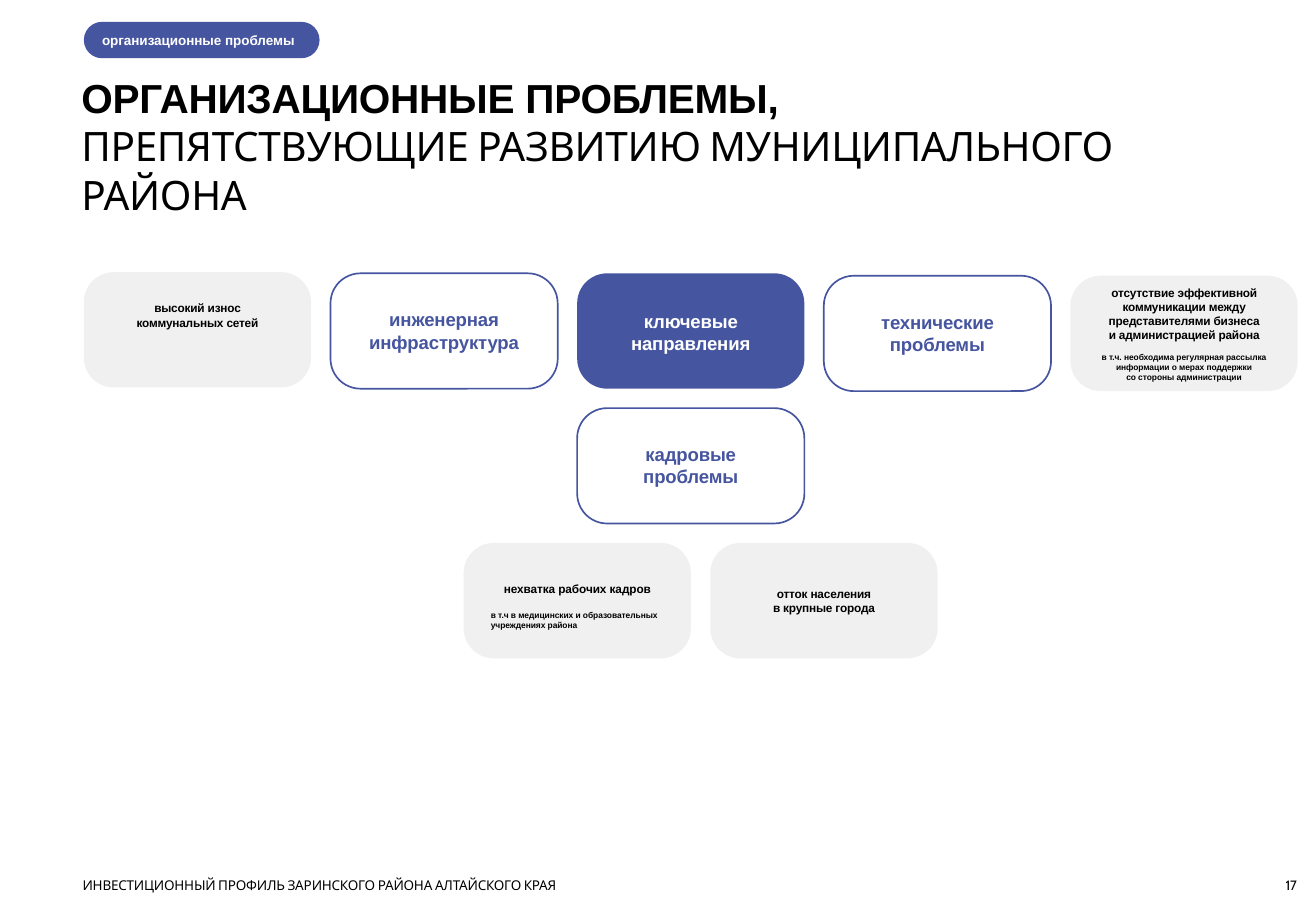
from pptx import Presentation
from pptx.dml.color import RGBColor
from pptx.enum.shapes import MSO_SHAPE as Shape
from pptx.enum.text import PP_ALIGN as Align
from pptx.util import Inches, Pt

COLORS = {"blue": "46559F", "gray": "F0F0F0", "white": "FFFFFF", "black": "000000"}
CARD_W, CARD_H = 1.87, 0.95
COL_X, COL_STEP = 0.69, 2.03

HEADING = {"size": 11, "line": 13.1, "spc": -10}
PROBLEM = {"size": 7, "spc": -8}
DETAIL = {"size": 5, "spc": -5}


def color(name):
    return RGBColor.from_string(COLORS[name])


def rounded(s, x, y, w, h, radius, fill=None, line=None):
    sp = s.shapes.add_shape(Shape.ROUNDED_RECTANGLE, Inches(x), Inches(y), Inches(w), Inches(h))
    sp.adjustments[0] = radius
    sp.shadow.inherit = False
    if fill:
        sp.fill.solid()
        sp.fill.fore_color.rgb = color(fill)
    else:
        sp.fill.background()
    if line:
        sp.line.color.rgb = color(line)
        sp.line.width = Pt(1)
    else:
        sp.line.fill.background()


def text(s, x, y, w, h, paragraphs, ink="black", align=Align.LEFT, top=0.02):
    tf = s.shapes.add_textbox(Inches(x), Inches(y), Inches(w), Inches(h)).text_frame
    tf.word_wrap = True
    frame = {"margin_left": 0, "margin_right": 0, "margin_bottom": 0, "margin_top": Inches(top)}
    for name, value in frame.items():
        setattr(tf, name, value)
    for i, (content, style) in enumerate(paragraphs):
        p = tf.add_paragraph() if i else tf.paragraphs[0]
        p.alignment = align
        if "line" in style:
            p.line_spacing = Pt(style["line"])
        if "before" in style:
            p.space_before = Pt(style["before"])
        r = p.add_run()
        r.text = content
        font = {"size": Pt(style["size"]), "name": style.get("font", "Arial"),
                "bold": style.get("bold", True)}
        for name, value in font.items():
            setattr(r.font, name, value)
        r.font.color.rgb = color(ink)
        r._r.get_or_add_rPr().set("spc", str(style["spc"]))


def card(s, col, y, text_y, text_w, paragraphs, fill=None, line=None, ink="black"):
    x = COL_X + col * COL_STEP
    rounded(s, x, y, CARD_W, CARD_H, 0.26, fill, line)
    text(s, x + (CARD_W - text_w) / 2, text_y, text_w, y + CARD_H - text_y,
         paragraphs, ink, Align.CENTER)


def main():
    prs = Presentation()
    prs.slide_width, prs.slide_height = Inches(10.83), Inches(7.5)
    s = prs.slides.add_slide(prs.slide_layouts[6])

    rounded(s, COL_X, 0.18, 1.94, 0.3, 0.5, "blue")
    text(s, 0.84, 0.24, 1.7, 0.16,
         [("организационные проблемы", {"size": 8, "spc": -5})], "white")
    text(s, 0.67, 0.58, 9.67, 1.23, [
        ("ОРГАНИЗАЦИОННЫЕ ПРОБЛЕМЫ,", {"size": 24, "spc": -15}),
        ("ПРЕПЯТСТВУЮЩИЕ РАЗВИТИЮ МУНИЦИПАЛЬНОГО РАЙОНА",
         {"size": 24, "font": "Cabin", "bold": False, "spc": -20}),
    ])

    problem_card = {"fill": "gray"}
    direction_card = {"line": "blue", "ink": "blue"}
    card(s, 0, 2.24, 2.46, 1.05, [("высокий износ коммунальных сетей", PROBLEM)], **problem_card)
    card(s, 1, 2.25, 2.52, 1.4,
         [("инженерная", HEADING), ("инфраструктура", HEADING)], **direction_card)
    card(s, 2, 2.25, 2.53, 1.1, [("ключевые направления", HEADING)], fill="blue", ink="white")
    card(s, 3, 2.27, 2.54, 1.1, [("технические проблемы", HEADING)], **direction_card)
    card(s, 4, 2.27, 2.33, 1.41, [
        ("отсутствие эффективной коммуникации между", PROBLEM),
        ("представителями бизнеса", PROBLEM),
        ("и администрацией района", PROBLEM),
        ("в т.ч. необходима регулярная рассылка информации о мерах поддержки",
         {**DETAIL, "before": 6}),
        ("со стороны администрации", DETAIL),
    ], **problem_card)
    card(s, 2, 3.36, 3.63, 1.1,
         [("кадровые", HEADING), ("проблемы", HEADING)], **direction_card)
    card(s, 1.54, 4.47, 4.77, 1.4, [("нехватка рабочих кадров", {**PROBLEM, "spc": -3})],
         **problem_card)
    text(s, 4.04, 5, 1.44, 0.18,
         [("в т.ч в медицинских и образовательных учреждениях района", DETAIL)])
    card(s, 2.54, 4.47, 4.81, 1.1,
         [("отток населения", PROBLEM), ("в крупные города", PROBLEM)], **problem_card)

    footer = {"size": 8, "font": "Cabin", "bold": False, "spc": -13}
    text(s, 0.68, 7.22, 4.35, 0.14,
         [("ИНВЕСТИЦИОННЫЙ ПРОФИЛЬ ЗАРИНСКОГО РАЙОНА АЛТАЙСКОГО КРАЯ", footer)], top=0)
    text(s, 10.58, 7.22, 0.18, 0.15, [("17", footer)], top=0)
    prs.save("out.pptx")


if __name__ == "__main__":
    main()
